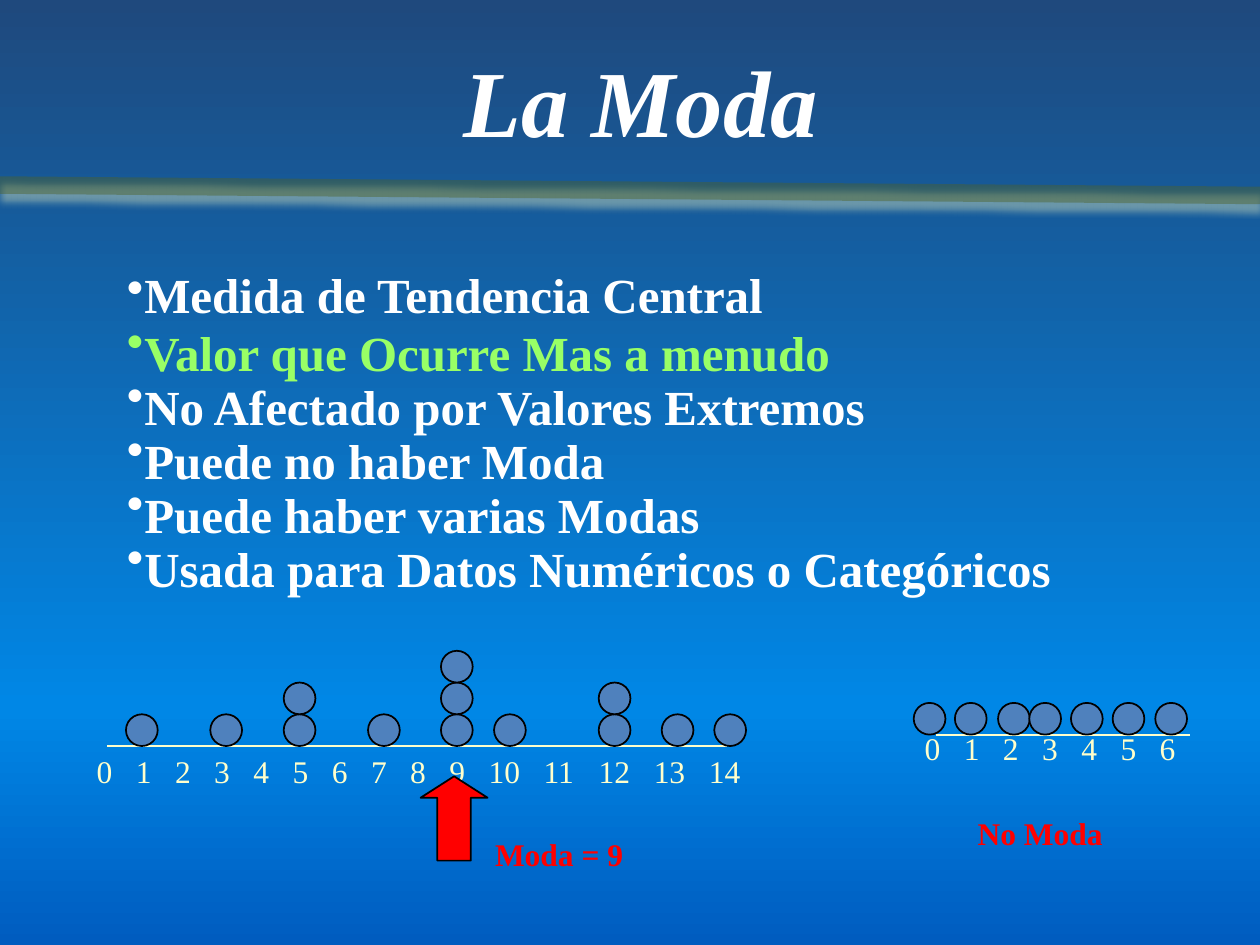
from dataclasses import dataclass

from lxml.etree import SubElement
from pptx import Presentation
from pptx.dml.color import RGBColor as Rgb
from pptx.enum.shapes import MSO_CONNECTOR as Connector, MSO_SHAPE as Preset
from pptx.enum.text import MSO_AUTO_SIZE as AutoSize, PP_ALIGN as Align
from pptx.oxml import parse_xml
from pptx.oxml.ns import nsdecls, qn
from pptx.util import Cm, Pt

COLORS = {
    "navy": "1F497D", "sky": "0087E6", "deep": "005CBF",
    "olive": "4F6228", "glow": "D7E4BD", "white": "FFFFFF",
    "lime": "99FF66", "cream": "FFFFCC", "red": "FF0000",
    "dot": "4F81BD", "black": "000000",
}
FONT = "Times New Roman"
TITLE = {"size": Pt(54), "bold": True, "italic": True}
BODY = {"size": Pt(28), "bold": True}
NUMBERS = {"size": Pt(18)}
CAPTION = {"size": Pt(18), "bold": True}

DOT = 0.64
ONE_DIGIT_STEP, TWO_DIGIT_STEP = 0.79, 1.11


@dataclass
class Box:
    left: float
    top: float
    width: float
    height: float

    def lengths(self) -> list:
        return [Cm(v) for v in (self.left, self.top, self.width, self.height)]


@dataclass
class Line:
    text: str
    color: str
    spacing: float | None = None


@dataclass
class DotPlot:
    baseline: float
    axis_parts: list[tuple[float, float]]
    stacks: list[tuple[float, int]]
    last_number: int
    numbers_box: Box
    caption: str
    caption_box: Box


BULLETS = [
    Line("Medida de Tendencia Central", "white"),
    Line("Valor que Ocurre Mas a menudo", "lime", 0.5),
    Line("No Afectado por Valores Extremos", "white", 0.5),
    Line("Puede no haber Moda", "white", 0.5),
    Line("Puede haber varias Modas", "white", 0.5),
    Line("Usada para Datos Numéricos o Categóricos", "white", 0.5),
]

PLOTS = [
    DotPlot(
        15.04, [(2.16, 11.48), (11.05, 14.66)],
        [(2.54, 1), (4.24, 1), (5.72, 2), (7.42, 1), (8.89, 3),
         (9.96, 1), (12.07, 2), (13.34, 1), (14.4, 1)],
        14, Box(1.7, 15.04, 15.27, 1.02),
        "Moda = 9", Box(9.73, 16.71, 4.67, 1.02),
    ),
    DotPlot(
        14.81, [(18.87, 23.98)],
        [(left, 1) for left in
         (18.42, 19.25, 20.12, 20.75, 21.59, 22.43, 23.29)],
        6, Box(18.39, 14.58, 7.01, 1.02),
        "No Moda", Box(19.46, 16.28, 4.47, 1.02),
    ),
]


def rgb(name: str) -> Rgb:
    return Rgb.from_string(COLORS[name])


def paint_background(slide) -> None:
    fill = slide.background.fill
    fill.gradient()
    fill.gradient_angle = 270
    stops = slide.background._cSld.find(".//" + qn("a:gsLst"))
    for stop in list(stops):
        stops.remove(stop)
    for percent, name in ((0, "navy"), (75, "sky"), (100, "deep")):
        stop = SubElement(stops, qn("a:gs"), pos=str(percent * 1000))
        SubElement(stop, qn("a:srgbClr"), val=COLORS[name])


def add_line(slide, start: tuple, end: tuple, color: str, width: float):
    """Draw a straight line with an empty effect list, which is returned."""
    ends = [Cm(v) for v in (*start, *end)]
    line = slide.shapes.add_connector(Connector.STRAIGHT, *ends)
    line.line.color.rgb = rgb(color)
    line.line.width = Pt(width)
    return line, SubElement(line._element.spPr, qn("a:effectLst"))


def add_divider(slide) -> None:
    """Draw the half-transparent band with its soft shadow under the title."""
    line, effects = add_line(slide, (0, 3.73), (25.4, 3.94), "olive", 10)
    color = line._element.spPr.find(".//" + qn("a:srgbClr"))
    SubElement(color, qn("a:alpha"), val="44000")
    effects.append(parse_xml(
        f'<a:outerShdw {nsdecls("a")} blurRad="{Pt(4)}" dist="{Pt(4)}" '
        f'dir="5400000" algn="t" rotWithShape="0">'
        f'<a:srgbClr val="{COLORS["glow"]}"/></a:outerShdw>'))


def add_figure(slide, preset, box: Box, color: str):
    shape = slide.shapes.add_shape(preset, *box.lengths())
    shape.shadow.inherit = False
    shape.fill.solid()
    shape.fill.fore_color.rgb = rgb(color)
    shape.line.color.rgb = rgb("black")
    shape.line.width = Pt(1)
    return shape


def add_text(slide, box: Box, lines: list[Line], style: dict,
             align=None, bullet: str = "", tabs: tuple = ()) -> None:
    frame = slide.shapes.add_textbox(*box.lengths()).text_frame
    frame.word_wrap = True
    frame.auto_size = AutoSize.SHAPE_TO_FIT_TEXT
    for index, line in enumerate(lines):
        para = frame.add_paragraph() if index else frame.paragraphs[0]
        para.alignment = align
        para.line_spacing = line.spacing
        span = para.add_run()
        span.text = line.text
        span.font.color.rgb = rgb(line.color)
        for name, value in {"name": FONT, **style}.items():
            setattr(span.font, name, value)
        props = para._p.get_or_add_pPr()
        before = SubElement(props, qn("a:spcBef"))
        SubElement(before, qn("a:spcPct"), val="50000")
        if bullet:
            props.set("marL", "0")
            props.set("indent", "0")
            SubElement(props, qn("a:buChar"), char=bullet)
        if tabs:
            tab_list = SubElement(props, qn("a:tabLst"))
            for position in tabs:
                SubElement(tab_list, qn("a:tab"), pos=str(Cm(position)), algn="l")


def number_tabs(last: int) -> tuple:
    """Place a tab for each number after 0, wider once it follows two digits."""
    return tuple(min(n, 10) * ONE_DIGIT_STEP + max(n - 10, 0) * TWO_DIGIT_STEP
                 for n in range(1, last + 1))


def add_dot_plot(slide, plot: DotPlot) -> None:
    for start, end in plot.axis_parts:
        add_line(slide, (start, plot.baseline), (end, plot.baseline), "cream", 1)
    numbers = "\t".join(str(n) for n in range(plot.last_number + 1))
    add_text(slide, plot.numbers_box, [Line(numbers, "cream")], NUMBERS,
             tabs=number_tabs(plot.last_number))
    for left, count in plot.stacks:
        for level in range(1, count + 1):
            box = Box(left, plot.baseline - level * DOT, DOT, DOT)
            add_figure(slide, Preset.OVAL, box, "dot")
    add_text(slide, plot.caption_box, [Line(plot.caption, "red")], CAPTION)


def main() -> None:
    deck = Presentation()
    deck.slide_width, deck.slide_height = Cm(25.4), Cm(19.05)
    slide = deck.slides.add_slide(deck.slide_layouts[6])
    paint_background(slide)
    add_divider(slide)
    add_text(slide, Box(1.65, 0.74, 22.53, 2.57), [Line("La Moda", "white")],
             TITLE, align=Align.CENTER)
    add_text(slide, Box(2.31, 5.21, 21.97, 7.52), BULLETS, BODY, bullet="•")
    for plot in PLOTS:
        add_dot_plot(slide, plot)
    arrow = add_figure(slide, Preset.UP_ARROW, Box(8.48, 15.65, 1.35, 1.7), "red")
    arrow.adjustments[0] = 0.5
    arrow.adjustments[1] = 0.32
    deck.save("out.pptx")


if __name__ == "__main__":
    main()
